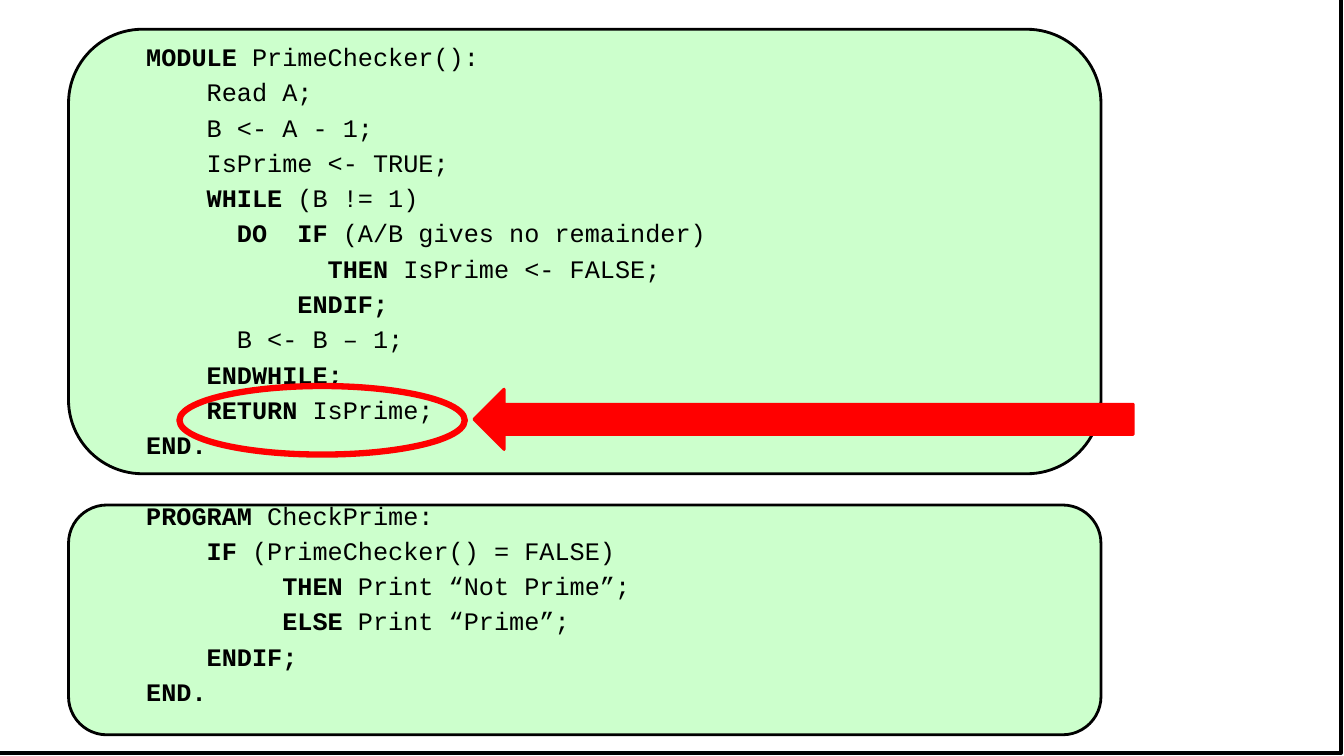
import pptx
import pptx.dml.color
import pptx.enum.shapes
import pptx.enum.text
import pptx.oxml.ns
import pptx.util
from lxml import etree

Inches = pptx.util.Inches
Pt = pptx.util.Pt
Kind = pptx.enum.shapes.MSO_SHAPE

# Each code line: indent in characters, bold keyword, plain remainder
MODULE_CODE = [
    (0, "MODULE", " PrimeChecker():"),
    (4, "", "Read A;"),
    (4, "", "B <- A - 1;"),
    (4, "", "IsPrime <- TRUE;"),
    (4, "WHILE", " (B != 1)"),
    (6, "DO\tIF", " (A/B gives no remainder)"),
    (12, "THEN", " IsPrime <- FALSE;"),
    (10, "ENDIF;", ""),
    (6, "", "B <- B – 1;"),
    (4, "ENDWHILE;", ""),
    (4, "RETURN", " IsPrime;"),
    (0, "END.", ""),
]
PROGRAM_CODE = [
    (0, "PROGRAM", " CheckPrime:"),
    (4, "IF", " (PrimeChecker() = FALSE)"),
    (9, "THEN", " Print “Not Prime”;"),
    (9, "ELSE", " Print “Prime”;"),
    (4, "ENDIF;", ""),
    (0, "END.", ""),
]

# Shapes: kind, (left, top, width, height), fill, line colour, line width, rotation
CODE_BOXES = [
    (Kind.ROUNDED_RECTANGLE, (0.68, 5.01, 10.24, 2.28), "CCFFCC", "000000", 2, 0),
    (Kind.ROUNDED_RECTANGLE, (0.68, 0.29, 10.24, 4.41), "CCFFCC", "000000", 2, 0),
]
FRAME_AND_MARKERS = [
    (Kind.RECTANGLE, (-0.03, -0.03, 13.33, 7.5), None, "000000", 3, 0),
    (Kind.OVAL, (1.78, 3.83, 2.83, 0.68), None, "FF0000", 4.5, 0),
    (Kind.RIGHT_ARROW, (4.7, 3.86, 6.54, 0.6), "FF0000", "FF0000", 2, 180),
]

CODE_FONT = {"name": "Courier New", "size": Pt(18)}
CHARACTER_WIDTH = 0.15
TAB_CHARACTERS = 4
LINE_GAP = 3.6
PROGRAM_GAP = 28.8


def color(hex_value):
    return pptx.dml.color.RGBColor.from_string(hex_value)


def add_shape(slide, kind, box, fill, line_color, line_width, rotation):
    shape = slide.shapes.add_shape(kind, *map(Inches, box))
    shape.shadow.inherit = False
    shape.rotation = rotation
    if fill:
        shape.fill.solid()
        shape.fill.fore_color.rgb = color(fill)
    else:
        shape.fill.background()
    shape.line.color.rgb = color(line_color)
    shape.line.width = Pt(line_width)


def indent_paragraph(paragraph, characters, hanging):
    properties = paragraph._p.get_or_add_pPr()
    properties.set("marL", str(Inches((characters + hanging) * CHARACTER_WIDTH)))
    properties.set("indent", str(Inches(-hanging * CHARACTER_WIDTH)))
    etree.SubElement(properties, pptx.oxml.ns.qn("a:buNone"))


def add_code_line(paragraph, characters, keyword, remainder, gap):
    paragraph.space_before = Pt(gap)
    hanging = TAB_CHARACTERS if "\t" in keyword else 0
    indent_paragraph(paragraph, characters, hanging)
    for text, bold in ((keyword, True), (remainder, False)):
        if text:
            run = paragraph.add_run()
            run.text = text
            for name, value in {**CODE_FONT, "bold": bold}.items():
                setattr(run.font, name, value)
            run.font.color.rgb = color("000000")


def fill_code(body):
    body.left, body.top, body.width, body.height = map(Inches, (1.35, 0.36, 11.04, 4.95))
    frame = body.text_frame
    frame_format = {
        "word_wrap": True,
        "auto_size": pptx.enum.text.MSO_AUTO_SIZE.NONE,
        "vertical_anchor": pptx.enum.text.MSO_ANCHOR.TOP,
    }
    for name, value in frame_format.items():
        setattr(frame, name, value)
    for index, line in enumerate(MODULE_CODE + PROGRAM_CODE):
        paragraph = frame.add_paragraph() if index else frame.paragraphs[0]
        gap = PROGRAM_GAP if index == len(MODULE_CODE) else LINE_GAP
        add_code_line(paragraph, *line, gap)


def main():
    presentation = pptx.Presentation()
    presentation.slide_width, presentation.slide_height = Inches(13.33), Inches(7.5)
    slide = presentation.slides.add_slide(presentation.slide_layouts[1])

    # The slide has no title
    title = slide.shapes.title.element
    title.getparent().remove(title)
    body = slide.placeholders[1]

    # Green boxes, then the code above them
    for box in CODE_BOXES:
        add_shape(slide, *box)
    slide.shapes[-1].element.addnext(body.element)
    fill_code(body)

    # Slide frame, ring and arrow around the RETURN line
    for marker in FRAME_AND_MARKERS:
        add_shape(slide, *marker)

    presentation.save("out.pptx")


if __name__ == "__main__":
    main()
